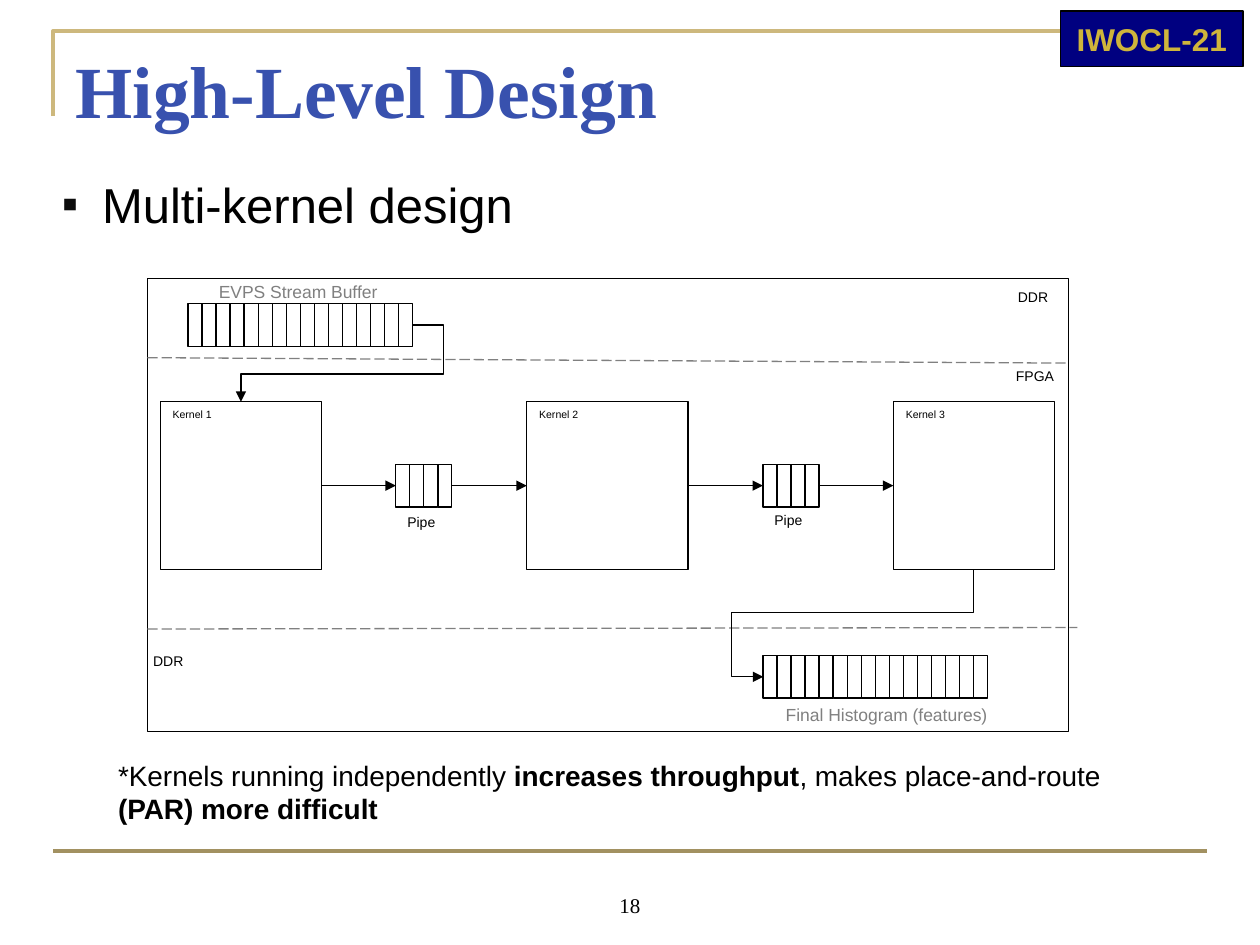
import lxml.etree
import pptx
import pptx.dml.color
import pptx.enum.dml
import pptx.enum.shapes
import pptx.enum.text
import pptx.oxml.ns
import pptx.util

RGB = pptx.dml.color.RGBColor
BLACK = RGB(0, 0, 0)
WHITE = RGB(255, 255, 255)
GRAY = RGB(0x80, 0x80, 0x80)
NAVY = RGB(0, 0, 0x80)
GOLD = RGB(0xCF, 0xB5, 0x3B)
SAND = RGB(0xCD, 0xB8, 0x7D)
OCHRE = RGB(0xA2, 0x91, 0x61)
BLUE = RGB(0x38, 0x51, 0xAE)

SANS, SERIF = "Arial", "Times New Roman"
ALIGN = pptx.enum.text.PP_ALIGN
ANCHOR = pptx.enum.text.MSO_ANCHOR
WIRE = pptx.enum.shapes.MSO_CONNECTOR
LEFT, RIGHT = 1, 3  # connection sites of a rectangle


def cm(values):
    return [pptx.util.Cm(v) for v in values]


def add(parent, tag, **attrs):
    return lxml.etree.SubElement(parent, pptx.oxml.ns.qn(tag), **attrs)


class Page:
    """Holds the drawing style and the current slide."""

    def __init__(self, deck):
        self.slide = deck.slides.add_slide(deck.slide_layouts[5])
        self.shapes = self.slide.shapes
        self.thin = 0.75
        self.tall = 0.86  # height of a buffer cell

    def style(self, para, size, color=BLACK, font=SANS, bold=False):
        for run in para.runs:
            run.font.name, run.font.size = font, pptx.util.Pt(size)
            run.font.color.rgb, run.font.bold = color, bold

    def fill(self, shape, text, size, align=ALIGN.LEFT, anchor=ANCHOR.TOP, **look):
        frame = shape.text_frame
        frame.text = text
        frame.word_wrap = True
        frame.vertical_anchor = anchor
        para = frame.paragraphs[0]
        para.alignment = align
        self.style(para, size, **look)
        return para

    def title(self, box, text, size, **look):
        shape = self.shapes.title
        shape.left, shape.top, shape.width, shape.height = cm(box)
        self.fill(shape, text, size, **look)
        shape.text_frame.margin_top = pptx.util.Cm(0.14)

    def text(self, box, text, size, **look):
        shape = self.shapes.add_textbox(*cm(box))
        return self.fill(shape, text, size, **look)

    def label(self, box, text, size, color=BLACK):
        self.text(box, text, size, align=ALIGN.CENTER,
                  anchor=ANCHOR.MIDDLE, color=color)

    def bullet(self, box, text, size):
        shape = self.shapes.add_textbox(*cm(box))
        para = self.fill(shape, text, size)
        shape.text_frame.margin_top = pptx.util.Cm(0.13)
        props = para._p.get_or_add_pPr()
        hang, pull = cm((0.97, -0.81))
        props.set("marL", str(hang))
        props.set("indent", str(pull))
        tint = add(props, "a:buClr")
        add(tint, "a:srgbClr", val="0C0C0C")
        add(props, "a:buSzPct", val="95000")
        add(props, "a:buFont", typeface=SANS)
        add(props, "a:buChar", char="▪")

    def rect(self, box, fill=None, shapes=None):
        kind = pptx.enum.shapes.MSO_SHAPE.RECTANGLE
        shape = (shapes or self.shapes).add_shape(kind, *cm(box))
        shape.shadow.inherit = False
        if fill is None:
            shape.fill.background()
        else:
            shape.fill.solid()
            shape.fill.fore_color.rgb = fill
        shape.line.color.rgb = BLACK
        shape.line.width = pptx.util.Pt(self.thin)
        return shape

    def cells(self, left, top, width, count):
        group = self.shapes.add_group_shape()
        step = width / count
        return [self.rect((left + i * step, top, step, self.tall),
                          shapes=group.shapes) for i in range(count)]

    def line(self, ends, color=BLACK, width=None, kind=WIRE.STRAIGHT,
             dash=None, arrow=False):
        wire = self.shapes.add_connector(kind, *cm(ends))
        wire.line.color.rgb = color
        wire.line.width = pptx.util.Pt(width or self.thin)
        if dash:
            wire.line.dash_style = dash
        props = wire.element.spPr
        if arrow:
            add(props.find(pptx.oxml.ns.qn("a:ln")), "a:tailEnd", type="triangle")
        add(props, "a:effectLst")
        return wire

    def join(self, start, end):
        wire = self.line((0, 0, 1, 1), arrow=True)
        wire.begin_connect(start, RIGHT)
        wire.end_connect(end, LEFT)

    def bend(self, ends, bends, turn=0):
        """Four-part elbow; bends are shares of its width and height."""
        wire = self.line(ends, kind=WIRE.ELBOW, arrow=True)
        props = wire.element.spPr
        shape = props.find(pptx.oxml.ns.qn("a:prstGeom"))
        shape.set("prst", "bentConnector4")
        guides = shape.find(pptx.oxml.ns.qn("a:avLst"))
        if guides is None:
            guides = add(shape, "a:avLst")
        for i, share in enumerate(bends, 1):
            add(guides, "a:gd", name=f"adj{i}", fmla=f"val {round(share * 100000)}")
        if turn:
            props.find(pptx.oxml.ns.qn("a:xfrm")).set("rot", str(turn * 60000))

    def trace(self, points, color, width):
        spots = [cm(p) for p in points]
        path = self.shapes.build_freeform(*spots[0])
        path.add_line_segments(spots[1:], close=False)
        shape = path.convert_to_shape()
        shape.shadow.inherit = False
        shape.fill.background()
        shape.line.color.rgb = color
        shape.line.width = pptx.util.Pt(width)


def main():
    deck = pptx.Presentation()
    deck.slide_width, deck.slide_height = cm((25.4, 19.05))
    page = Page(deck)

    # Slide frame, badge and heading
    page.trace([(1.07, 2.34), (1.07, 0.63), (23.93, 0.63)], SAND, 2.25)
    page.line((1.07, 17.15, 24.33, 17.15), OCHRE, 2.25)
    badge = page.rect((21.38, 0.22, 3.68, 1.12), NAVY)
    page.fill(badge, "IWOCL-21", 18, ALIGN.CENTER, ANCHOR.MIDDLE,
              color=GOLD, bold=True)
    page.title((1.27, 0.76, 22.86, 2.62), "High-Level Design", 42,
               color=BLUE, font=SERIF, bold=True)
    page.bullet((0.84, 3.38, 23.7, 13.64), "Multi-kernel design", 28)
    page.text((10.16, 17.35, 5.08, 1.27), "18", 12, align=ALIGN.CENTER,
              anchor=ANCHOR.BOTTOM, font=SERIF)

    # Board with its memory zones
    page.rect((2.97, 5.61, 18.57, 9.14))
    dash = pptx.enum.dml.MSO_LINE.LONG_DASH
    page.line((2.97, 7.21, 21.54, 7.32), GRAY, dash=dash)
    page.line((2.97, 12.68, 21.72, 12.65), GRAY, dash=dash)
    for left, top, name in ((19.95, 5.64, "DDR"), (19.99, 7.23, "FPGA"),
                            (2.52, 12.97, "DDR")):
        page.label((left, top, 1.75, 0.69), name, 8)

    # Buffers
    page.cells(3.79, 6.12, 4.53, 16)
    page.label((3.05, 5.54, 5.92, 0.69), "EVPS Stream Buffer", 10, GRAY)
    page.cells(15.38, 13.21, 4.53, 16)
    page.label((14.91, 14.05, 5.92, 0.69), "Final Histogram (features)", 10, GRAY)

    # Kernels
    kernels = []
    for i in range(3):
        box = page.rect((3.23 + i * 7.39, 8.1, 3.25, 3.38), WHITE if i else None)
        page.fill(box, f"Kernel {i + 1}", 6)
        kernels.append(box)

    # Pipes between neighbouring kernels
    for i, drop in enumerate((10.18, 10.14)):
        left = 7.98 + i * 7.4
        pipe = page.cells(left, 9.36, 1.13, 4)
        page.join(kernels[i], pipe[0])
        page.join(pipe[-1], kernels[i + 1])
        page.label((left - 0.36, drop, 1.75, 0.69), "Pipe", 8)

    # Buffer to first kernel, last kernel to histogram
    page.bend((8.32, 6.55, 4.86, 8.1), (-0.18, 0.64))
    page.bend((16.42, 10.44, 18.59, 14.68), (0.4, 1.15), turn=90)

    # Closing remark
    note = page.text((2.13, 15.16, 21.13, 1.63),
                     "*Kernels running independently ", 16)
    for words in ("increases throughput", ", makes place-and-route ",
                  "(PAR) more difficult"):
        note.add_run().text = words
    page.style(note, 16)
    for run in note.runs[1::2]:
        run.font.bold = True

    deck.save("out.pptx")


if __name__ == "__main__":
    main()
